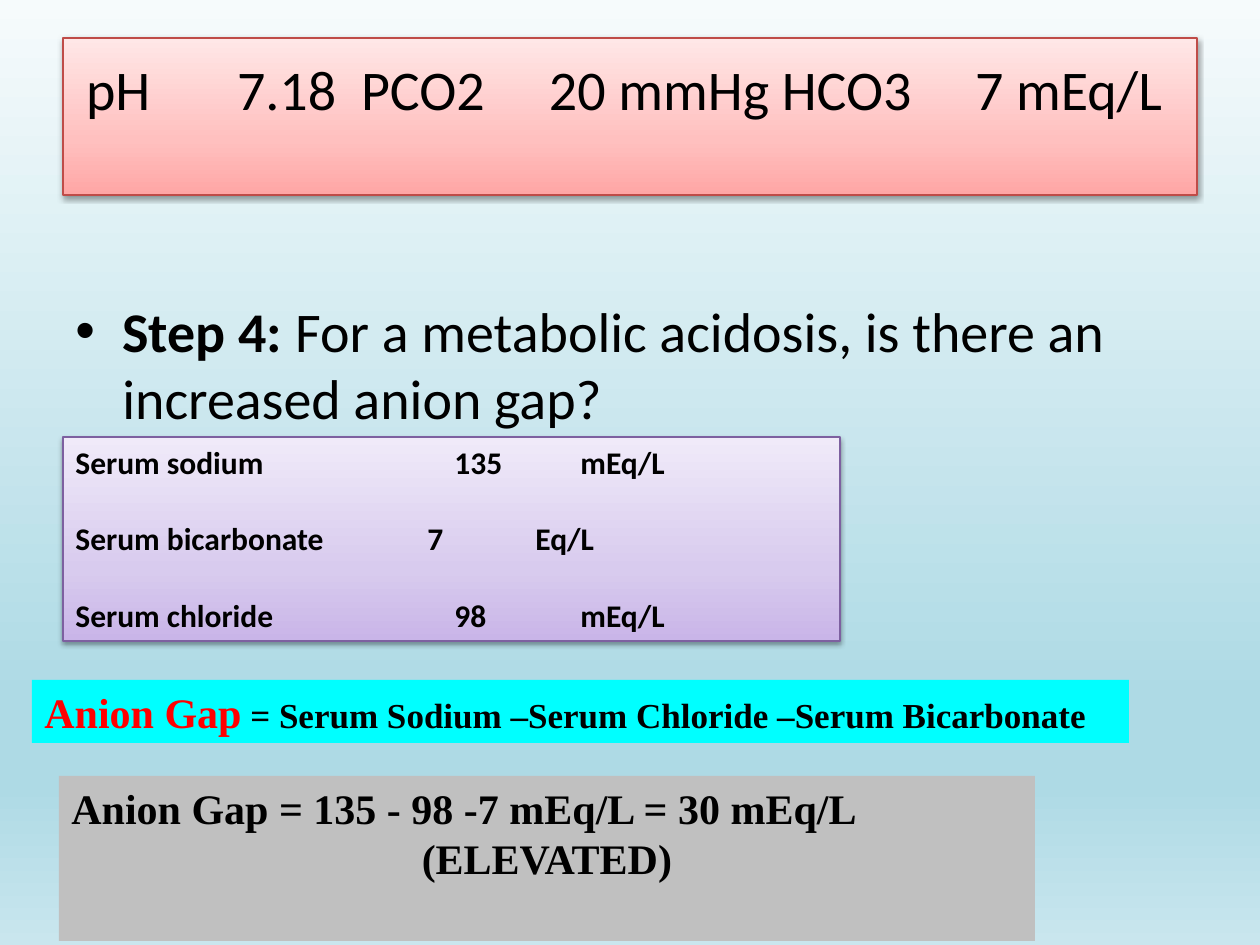
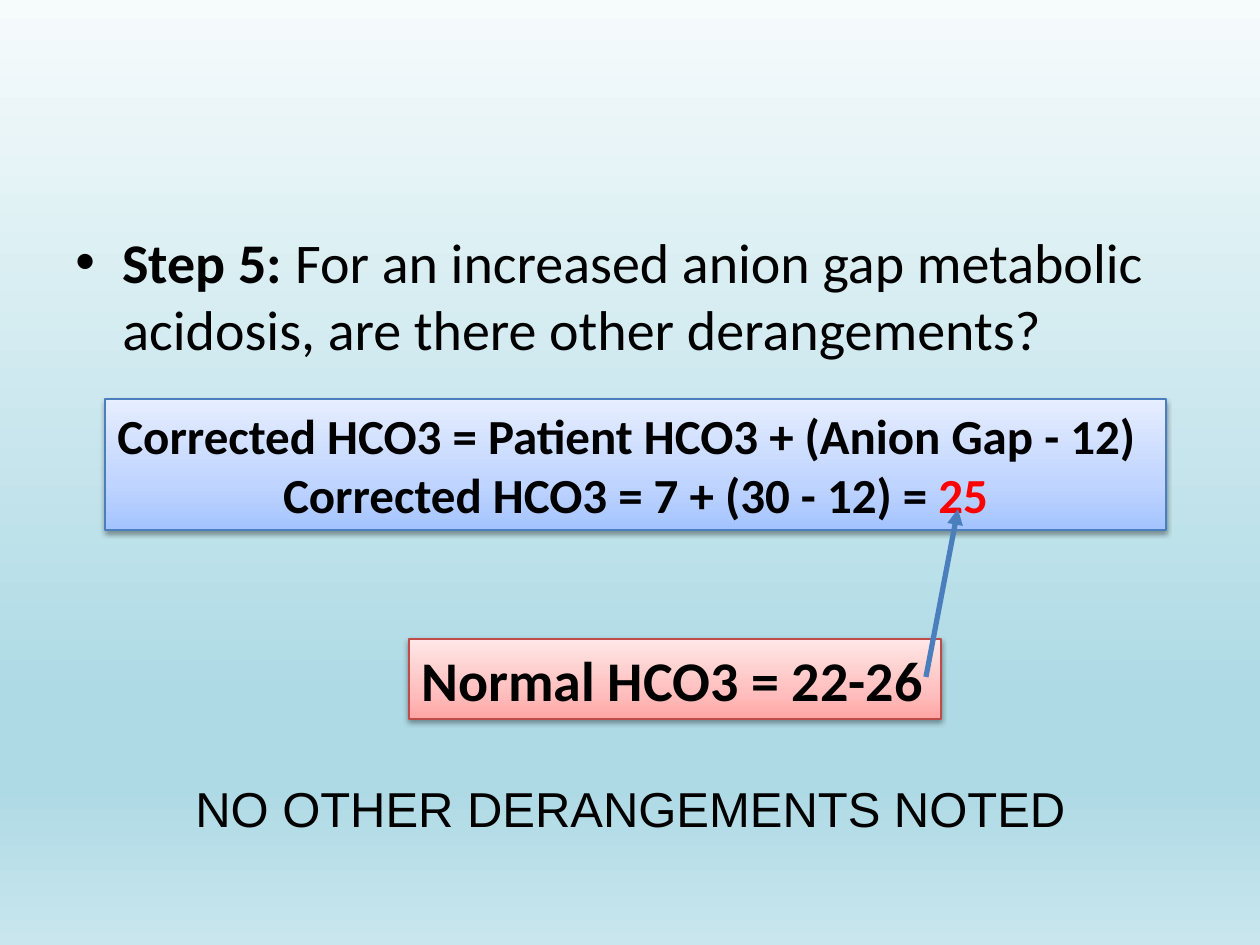
from lxml.etree import SubElement
from pptx import Presentation
from pptx.dml.color import RGBColor
from pptx.enum.shapes import MSO_CONNECTOR, MSO_SHAPE
from pptx.enum.text import MSO_ANCHOR, MSO_AUTO_SIZE, PP_ALIGN
from pptx.oxml.ns import qn
from pptx.util import Pt

PX_PER_INCH = 126
TITLE_ONLY, BLANK = 5, 6
COLORS = {
    "black": "000000",
    "red": "FF0000",
    "cyan": "00FFFF",
    "gray": "C0C0C0",
    "blue": "4B7EBC",
}
BACKGROUND = [(0, "F6FBFC"), (74, "AEDAE5"), (83, "AEDAE5"), (100, "C9E6EE")]
# Glossy panels: line colour, then gradient from bottom to top
PANELS = {
    "red": ("BF4C48", [(0, "FFA6A5"), (35, "FFC0BF"), (100, "FFE7E7")]),
    "blue": ("4B7EBC", [(0, "A4C4FF"), (35, "BFD4FF"), (100, "E6EEFF")]),
    "purple": ("7D60A0", [(0, "C9B5E8"), (35, "D8CBEE"), (100, "F0EAF9")]),
}


def px(length):
    return round(length * 914400 / PX_PER_INCH)


def color(name):
    return RGBColor.from_string(COLORS[name])


def set_gradient(fill, element, stops, angle):
    """Fill with the given stops; the angle runs clockwise in degrees."""
    fill.gradient()
    gradient = element.find(".//" + qn("a:gradFill"))
    stop_list = gradient.find(qn("a:gsLst"))
    for stop in list(stop_list):
        stop_list.remove(stop)
    for position, value in stops:
        stop = SubElement(stop_list, qn("a:gs"), pos=str(position * 1000))
        SubElement(stop, qn("a:srgbClr"), val=value)
    gradient.find(qn("a:lin")).set("ang", str(angle * 60000))


def style_panel(shape, panel):
    """Gradient fill, thin line and soft shadow below."""
    line_color, stops = PANELS[panel]
    set_gradient(shape.fill, shape._element, stops, 270)
    shape.line.color.rgb = RGBColor.from_string(line_color)
    shape.line.width = Pt(0.75)
    shape.shadow.inherit = False
    effects = shape._element.spPr.find(qn("a:effectLst"))
    shadow = SubElement(effects, qn("a:outerShdw"), blurRad=str(Pt(3.1)),
                        dist=str(Pt(1.6)), dir="5400000", rotWithShape="0")
    shadow_color = SubElement(shadow, qn("a:srgbClr"), val=COLORS["black"])
    SubElement(shadow_color, qn("a:alpha"), val="38000")


def place(shape, left, top, width, height):
    shape.left, shape.top = px(left), px(top)
    shape.width, shape.height = px(width), px(height)


def prepare_frame(shape, wrap=True):
    frame = shape.text_frame
    frame.auto_size = MSO_AUTO_SIZE.NONE
    frame.word_wrap = wrap
    frame.vertical_anchor = MSO_ANCHOR.TOP
    return frame


def write_line(frame, runs, size, font="Calibri", bold=True, align=PP_ALIGN.LEFT):
    """Add a paragraph; runs is a list of (text, font overrides)."""
    paragraph = frame.paragraphs[0]
    if paragraph.runs:
        paragraph = frame.add_paragraph()
    paragraph.alignment = align
    paragraph.font.name = font
    paragraph.font.size = Pt(size)
    paragraph.font.bold = bold
    paragraph.font.color.rgb = color("black")
    for text, overrides in runs:
        run = paragraph.add_run()
        run.text = text
        if "color" in overrides:
            run.font.color.rgb = color(overrides["color"])
        if "size" in overrides:
            run.font.size = Pt(overrides["size"])
        if "bold" in overrides:
            run.font.bold = overrides["bold"]
    return paragraph


def set_tabs(paragraph, stops):
    tab_list = SubElement(paragraph._p.get_or_add_pPr(), qn("a:tabLst"))
    # Tab stops precede the default run properties
    defaults = paragraph._p.pPr.find(qn("a:defRPr"))
    if defaults is not None:
        defaults.addprevious(tab_list)
    for stop in stops:
        SubElement(tab_list, qn("a:tab"), pos=str(px(stop)), algn="l")


def add_title(slide, text, box, tabs):
    title = slide.shapes.title
    place(title, *box)
    style_panel(title, "red")
    frame = prepare_frame(title)
    frame.margin_left, frame.margin_top = px(23), px(16)
    set_tabs(write_line(frame, [(text, {})], 32, bold=False), tabs)


def add_step(slide, label, question, box):
    """Bulleted question with a bold step label."""
    text_box = slide.shapes.add_textbox(*map(px, box))
    paragraph = write_line(prepare_frame(text_box),
                           [(label, {"bold": True}), (question, {})], 32, bold=False)
    properties = paragraph._p.get_or_add_pPr()
    properties.set("marL", str(px(47)))
    properties.set("indent", str(px(-47)))
    bullet_font = properties.makeelement(qn("a:buFont"), {"typeface": "Arial"})
    bullet = properties.makeelement(qn("a:buChar"), {"char": "•"})
    properties.find(qn("a:defRPr")).addprevious(bullet_font)
    bullet_font.addnext(bullet)


def add_panel(slide, panel, box, wrap=True):
    shape = slide.shapes.add_shape(MSO_SHAPE.RECTANGLE, *map(px, box))
    style_panel(shape, panel)
    return prepare_frame(shape, wrap)


def add_flat_box(slide, fill, box):
    shape = slide.shapes.add_shape(MSO_SHAPE.RECTANGLE, *map(px, box))
    shape.shadow.inherit = False
    shape.fill.solid()
    shape.fill.fore_color.rgb = color(fill)
    shape.line.fill.background()
    return prepare_frame(shape)


def add_arrow(slide, start, end):
    arrow = slide.shapes.add_connector(MSO_CONNECTOR.STRAIGHT, *map(px, start + end))
    arrow.line.color.rgb = color("blue")
    arrow.line.width = Pt(3)
    SubElement(arrow.line._get_or_add_ln(), qn("a:tailEnd"), type="triangle")
    SubElement(arrow._element.spPr, qn("a:effectLst"))


def build_anion_gap_slide(presentation):
    slide = presentation.slides.add_slide(presentation.slide_layouts[TITLE_ONLY])
    add_step(slide, "Step 4: ",
             "For a metabolic acidosis, is there an increased anion gap?",
             (63, 290, 1134, 150))

    # Serum values, with tab stops for number and unit
    serum = add_panel(slide, "purple", (63, 437, 777, 204))
    rows = [
        ("Serum sodium\t135\tmEq/L", (379, 505)),
        ("Serum bicarbonate\t7\tEq/L", (352, 460)),
        ("Serum chloride\t98\tmEq/L", (379, 505)),
    ]
    for index, (text, tabs) in enumerate(rows):
        paragraph = write_line(serum, [(text, {})], 18)
        paragraph.space_before = Pt(22 if index else 0)
        set_tabs(paragraph, tabs)

    # Formula and result
    formula = add_flat_box(slide, "cyan", (32, 680, 1097, 63))
    write_line(formula, [
        ("Anion Gap", {"color": "red"}),
        (" = Serum Sodium –Serum Chloride –Serum Bicarbonate", {"size": 20}),
    ], 24, "Times New Roman")
    result = add_flat_box(slide, "gray", (59, 776, 976, 165))
    write_line(result, [("Anion Gap = 135 - 98 -7 mEq/L = 30 mEq/L", {})],
               24, "Times New Roman")
    write_line(result, [("(ELEVATED)", {})], 24, "Times New Roman",
               align=PP_ALIGN.CENTER)

    add_title(slide, "pH\t7.18\tPCO2\t20 mmHg HCO3\t7 mEq/L",
              (63, 38, 1134, 157), (151, 275, 463, 889))


def build_derangements_slide(presentation):
    slide = presentation.slides.add_slide(presentation.slide_layouts[BLANK])
    add_step(slide, "Step 5: ",
             "For an increased anion gap metabolic acidosis, "
             "are there other derangements?",
             (63, 221, 1134, 150))

    # Corrected and normal bicarbonate
    corrected = add_panel(slide, "blue", (105, 399, 1061, 131))
    write_line(corrected,
               [("Corrected HCO3 = Patient HCO3 + (Anion Gap - 12)", {})], 28)
    write_line(corrected, [("Corrected HCO3 = 7 + (30 - 12) = ", {}),
                           ("25", {"color": "red"})], 28, align=PP_ALIGN.CENTER)
    normal = add_panel(slide, "red", (409, 639, 532, 80), wrap=False)
    write_line(normal, [("Normal HCO3 = 22-26", {})], 32)
    add_arrow(slide, (926, 677), (958, 509))

    # Conclusion
    conclusion = slide.shapes.add_textbox(*map(px, (183, 772, 905, 72)))
    write_line(prepare_frame(conclusion, wrap=False),
               [("NO OTHER DERANGEMENTS NOTED", {})], 28, "Arial", bold=False)


def main():
    presentation = Presentation()
    presentation.slide_width, presentation.slide_height = px(1260), px(945)
    master = presentation.slide_master
    set_gradient(master.background.fill, master._element, BACKGROUND, 90)
    build_anion_gap_slide(presentation)
    build_derangements_slide(presentation)
    presentation.save("out.pptx")


if __name__ == "__main__":
    main()
